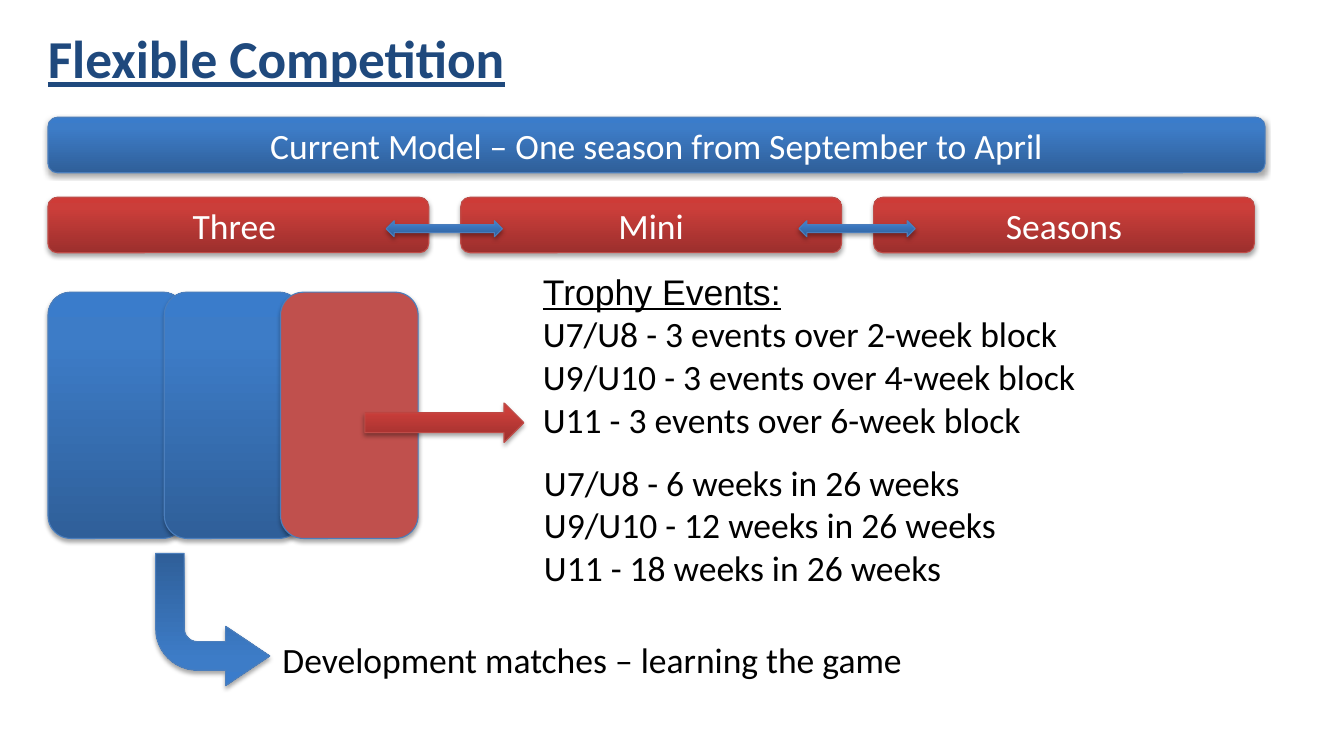
from pptx import Presentation
from pptx.dml.color import RGBColor
from pptx.enum.shapes import MSO_SHAPE as SHAPE
from pptx.enum.text import MSO_ANCHOR as ANCHOR, PP_ALIGN as ALIGN
from pptx.oxml import parse_xml
from pptx.oxml.ns import nsdecls, qn
from pptx.util import Inches, Pt

BLUE = ((0, "2F5F99"), (80, "3D7CC7"), (100, "3A7CCB"))
RED = ((0, "9C2F2D"), (80, "CB3E3A"), (100, "CE3B37"))
BLUE_LINE, RED_LINE, FLAT_RED = "4B7EBC", "BF4C48", "C0504D"
rgb = RGBColor.from_string

prs = Presentation()
prs.slide_width, prs.slide_height = Inches(12.6), Inches(7.09)
slide = prs.slides.add_slide(prs.slide_layouts[6])


def add_block(kind, x, y, w, h, fill, line, text=None):
    """Add a shadowed shape; fill is a hex colour or a tuple of gradient stops."""
    s = slide.shapes.add_shape(kind, Inches(x), Inches(y), Inches(w), Inches(h))
    if isinstance(fill, str):
        s.fill.solid()
        s.fill.fore_color.rgb = rgb(fill)
    else:
        stops = "".join(f'<a:gs pos="{pos * 1000}"><a:srgbClr val="{c}"/></a:gs>' for pos, c in fill)
        s._element.spPr.find(qn("a:prstGeom")).addnext(parse_xml(
            f'<a:gradFill {nsdecls("a")} rotWithShape="1"><a:gsLst>{stops}</a:gsLst>'
            '<a:lin ang="16200000" scaled="0"/></a:gradFill>'))
    s.line.color.rgb = rgb(line)
    s.line.width = Pt(0.75)
    s.shadow.inherit = False
    s._element.spPr.find(qn("a:effectLst")).append(parse_xml(
        f'<a:outerShdw {nsdecls("a")} blurRad="{Pt(3.1)}" dist="{Pt(1.8)}" dir="5400000" '
        'rotWithShape="0"><a:srgbClr val="000000"><a:alpha val="35000"/></a:srgbClr></a:outerShdw>'))
    if text:
        s.text_frame.vertical_anchor = ANCHOR.MIDDLE
        p = s.text_frame.paragraphs[0]
        p.alignment = ALIGN.CENTER
        r = p.add_run()
        r.text = text
        r.font.name, r.font.size = "Calibri", Pt(24)
        r.font.color.rgb = rgb("FFFFFF")
    return s


def add_text(x, y, w, h, lines, size=24, color="000000", inset=True):
    """Add a text box with one paragraph per line; without inset, lines are slightly indented."""
    tf = slide.shapes.add_textbox(Inches(x), Inches(y), Inches(w), Inches(h)).text_frame
    tf.word_wrap = True
    if not inset:
        tf.margin_left = tf.margin_top = tf.margin_bottom = 0
        tf.margin_right = Inches(0.04)
    for i, line in enumerate(lines):
        p = tf.add_paragraph() if i else tf.paragraphs[0]
        if not inset:
            p._p.get_or_add_pPr().set("marL", str(Inches(0.04)))
        r = p.add_run()
        r.text = line
        r.font.name, r.font.size = "Calibri", Pt(size)
        r.font.color.rgb = rgb(color)
    return tf


# Season bars
add_block(SHAPE.ROUNDED_RECTANGLE, 0.45, 1.1, 11.41, 0.52, BLUE, BLUE_LINE,
          "Current Model – One season from September to April")
season_step = 3.87
for i, word in enumerate(("Three ", "Mini", "Seasons")):
    add_block(SHAPE.ROUNDED_RECTANGLE, 0.45 + i * season_step, 1.85, 3.57, 0.52, RED, RED_LINE, word)
for i in range(2):
    add_block(SHAPE.LEFT_RIGHT_ARROW, 3.62 + i * season_step, 2.07, 1.09, 0.15, BLUE, BLUE_LINE)

# Overlapping blocks of one mini season
for i, fill in enumerate((BLUE, BLUE, FLAT_RED)):
    add_block(SHAPE.ROUNDED_RECTANGLE, 0.45 + i * 1.09, 2.74, 1.29, 2.31, fill, BLUE_LINE)

# Arrows to the explanations
development_arrow = add_block(SHAPE.BENT_ARROW, 1.46, 5.19, 1.07, 1.24, BLUE, BLUE_LINE)
development_arrow.rotation = 180
development_arrow._element.spPr.find(qn("a:xfrm")).set("flipH", "1")
for i, value in enumerate((0.25, 0.26, 0.387, 0.366)):
    development_arrow.adjustments[i] = value
add_text(2.55, 5.93, 8.14, 0.5, ["Development matches – learning the game"])
add_block(SHAPE.RIGHT_ARROW, 3.42, 3.78, 1.49, 0.37, RED, RED_LINE)

# Title and event details
title = add_text(0.35, 0.19, 11.34, 0.55, ["Flexible Competition"], 36, "1F497D")
font = title.paragraphs[0].runs[0].font
font.bold = font.underline = True

events = add_text(5.05, 2.53, 6.06, 1.65, [
    "Trophy Events:",
    "U7/U8 - 3 events over 2-week block",
    "U9/U10 - 3 events over 4-week block",
    "U11 - 3 events over 6-week block",
], inset=False)
font = events.paragraphs[0].runs[0].font
font.name, font.underline = "Arial", True

add_text(5.06, 4.32, 6.06, 1.26, [
    "U7/U8 - 6 weeks in 26 weeks",
    "U9/U10 - 12 weeks in 26 weeks",
    "U11 - 18 weeks in 26 weeks",
], inset=False)

prs.save("out.pptx")
